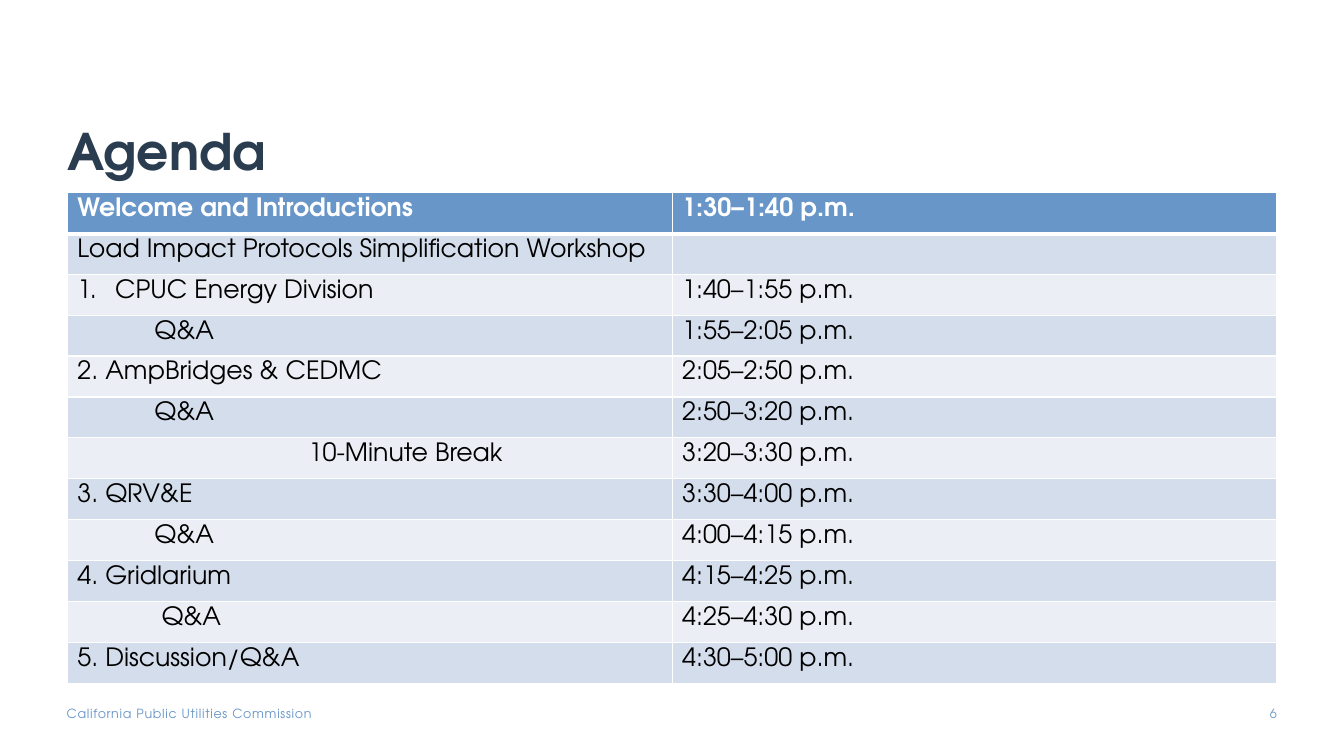
from dataclasses import dataclass

from lxml import etree
from pptx import Presentation
from pptx import util as u
from pptx.dml.color import RGBColor
from pptx.enum import text
from pptx.oxml import ns

Cm, Pt = u.Cm, u.Pt


@dataclass(frozen=True)
class Theme:
    font: str = "TeX Gyre Adventor"
    navy: str = "2A3C50"
    blue: str = "6996C9"
    white: str = "FFFFFF"
    black: str = "000000"
    bands: tuple = ("D4DDEB", "EBEFF5")
    title_size: int = 36
    body_size: int = 18
    footer_size: int = 9


THEME = Theme()
LEFT, WIDTH = 1.7, 30.48
QA_INDENT = 1.94

# Topic, time, left indent of the topic in cm
AGENDA = [
    ("Welcome and Introductions", "1:30–1:40 p.m.", 0),
    ("Load Impact Protocols Simplification Workshop", "", 0),
    ("CPUC Energy Division", "1:40–1:55 p.m.", 0),
    ("Q&A", "1:55–2:05 p.m.", QA_INDENT),
    ("2. AmpBridges & CEDMC", "2:05–2:50 p.m.", 0),
    ("Q&A", "2:50–3:20 p.m.", QA_INDENT),
    ("10-Minute Break", "3:20–3:30 p.m.", 5.83),
    ("3. QRV&E", "3:30–4:00 p.m.", 0),
    ("Q&A", "4:00–4:15 p.m.", QA_INDENT),
    ("4. Gridlarium", "4:15–4:25 p.m.", 0),
    ("Q&A", "4:25–4:30 p.m.", 2.12),
    ("5. Discussion/Q&A", "4:30–5:00 p.m.", 0),
]
NUMBERED_ROW = 2


def write(paragraph, content, size, color, bold=False, align=None,
          line_spacing=None, tracking=0):
    """Add one formatted run; tracking is in points."""
    if align is not None:
        paragraph.alignment = align
    if line_spacing:
        paragraph.line_spacing = line_spacing
    run = paragraph.add_run()
    run.text = content
    run.font.name = THEME.font
    run.font.size = Pt(size)
    run.font.bold = bold
    run.font.color.rgb = RGBColor.from_string(color)
    if tracking:
        run.font._element.set("spc", str(round(tracking * 100)))


def add_text(slide, content, left, top, width, height, margins=(0, 0, 0, 0),
             anchor=text.MSO_ANCHOR.TOP, **style):
    box = slide.shapes.add_textbox(Cm(left), Cm(top), Cm(width), Cm(height))
    frame = box.text_frame
    frame.word_wrap = True
    frame.vertical_anchor = anchor
    (frame.margin_left, frame.margin_top,
     frame.margin_right, frame.margin_bottom) = map(Cm, margins)
    write(frame.paragraphs[0], content, **style)


def indent(paragraph, left, first=0, numbered=False):
    properties = paragraph._p.get_or_add_pPr()
    properties.set("marL", str(Cm(left)))
    properties.set("indent", str(Cm(first)))
    if numbered:
        etree.SubElement(properties, ns.qn("a:buAutoNum"), type="arabicPeriod")


def set_borders(cell, **widths):
    """Draw white cell edges; widths are points keyed by L, R, T, B."""
    properties = cell._tc.get_or_add_tcPr()
    for index, (side, width) in enumerate(widths.items()):
        line = etree.Element(ns.qn(f"a:ln{side}"), w=str(Pt(width)))
        fill = etree.SubElement(line, ns.qn("a:solidFill"))
        etree.SubElement(fill, ns.qn("a:srgbClr"), val=THEME.white)
        properties.insert(index, line)


def format_cell(cell, row):
    header = row == 0
    cell.margin_top = cell.margin_bottom = Cm(0.13)
    cell.margin_left = cell.margin_right = Cm(0.25)
    cell.fill.solid()
    color = THEME.blue if header else THEME.bands[(row - 1) % 2]
    cell.fill.fore_color.rgb = RGBColor.from_string(color)
    set_borders(cell, L=1, R=1, T=3 if row == 1 else 1, B=3 if header else 1)


def add_agenda(slide, top, row_height, short_row_height):
    height = row_height * (len(AGENDA) - 1) + short_row_height
    table = slide.shapes.add_table(len(AGENDA), 2, Cm(LEFT), Cm(top),
                                   Cm(WIDTH), Cm(height)).table
    for row, (topic, time, left) in enumerate(AGENDA):
        table.rows[row].height = Cm(row_height if time else short_row_height)
        for column, content in enumerate((topic, time)):
            cell = table.cell(row, column)
            format_cell(cell, row)
            paragraph = cell.text_frame.paragraphs[0]
            if column == 0 and row == NUMBERED_ROW:
                indent(paragraph, 0.95, -0.95, numbered=True)
            elif column == 0 and left:
                indent(paragraph, left)
            if content:
                write(paragraph, content, THEME.body_size,
                      THEME.black if row else THEME.white, bold=row == 0)


def main():
    presentation = Presentation()
    presentation.slide_width, presentation.slide_height = Cm(33.87), Cm(19.05)
    slide = presentation.slides.add_slide(presentation.slide_layouts[6])
    footer = dict(size=THEME.footer_size, color=THEME.blue)

    add_text(slide, "California Public Utilities Commission",
             1.68, 17.78, 8.15, 0.38, tracking=0.5, **footer)
    add_text(slide, "Agenda", LEFT, 1.02, WIDTH, 3.68,
             margins=(0, 0.13, 0.25, 0.13), anchor=text.MSO_ANCHOR.BOTTOM,
             size=THEME.title_size, color=THEME.navy, bold=True,
             line_spacing=0.9)
    add_agenda(slide, top=4.86, row_height=1.03, short_row_height=0.91)
    add_text(slide, "6", 31.12, 17.78, 1.06, 0.5,
             align=text.PP_ALIGN.RIGHT, **footer)
    presentation.save("out.pptx")


if __name__ == "__main__":
    main()
